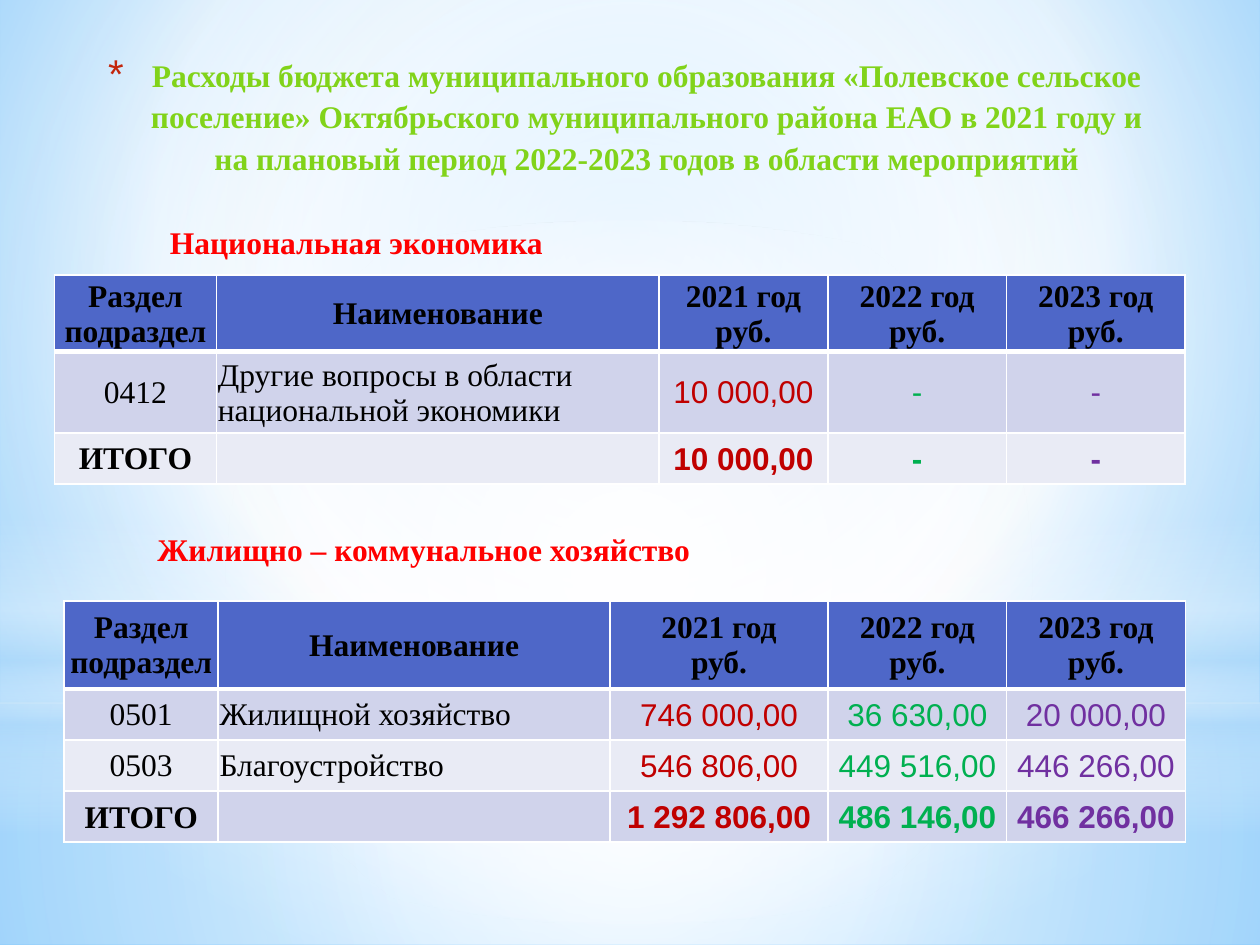
"""Build a budget slide with two expense tables on a soft blue backdrop."""
from lxml import etree
from pptx import Presentation
from pptx.dml.color import RGBColor
from pptx.enum.shapes import MSO_SHAPE
from pptx.enum.text import MSO_ANCHOR, MSO_AUTO_SIZE, PP_ALIGN
from pptx.oxml import parse_xml
from pptx.oxml.ns import nsdecls, qn
from pptx.util import Pt

RECT, OVAL = MSO_SHAPE.RECTANGLE, MSO_SHAPE.OVAL
TOP, MIDDLE = MSO_ANCHOR.TOP, MSO_ANCHOR.MIDDLE
LEFT, CENTER = PP_ALIGN.LEFT, PP_ALIGN.CENTER
NOFIT, GROW = MSO_AUTO_SIZE.NONE, MSO_AUTO_SIZE.SHAPE_TO_FIT_TEXT
SERIF, SANS = "Times New Roman", "Arial"
BLACK = RGBColor(0x00, 0x00, 0x00)
WHITE = RGBColor(0xFF, 0xFF, 0xFF)
SKY = RGBColor(0xB4, 0xDC, 0xFA)
PALE = RGBColor(0x9E, 0xD5, 0xFF)
AZURE = RGBColor(0x5B, 0xB9, 0xFF)
LIME = RGBColor(0x81, 0xD3, 0x1A)
RED = RGBColor(0xFF, 0x00, 0x00)
RUST = RGBColor(0xC3, 0x26, 0x0C)
CRIMSON = RGBColor(0xC0, 0x00, 0x00)
GREEN = RGBColor(0x00, 0xB0, 0x50)
PURPLE = RGBColor(0x70, 0x30, 0xA0)
HEAD = RGBColor(0x4E, 0x67, 0xC8)
BANDS = [RGBColor(0xE9, 0xEB, 0xF5), RGBColor(0xD0, 0xD3, 0xEB)]
INKS = [BLACK, BLACK, CRIMSON, GREEN, PURPLE]


def write(frame, text, font=SERIF, color=BLACK, bold=True, align=LEFT, space=1.0):
    """Fill a text frame with formatted paragraphs."""
    frame.text = text
    for para in frame.paragraphs:
        para.alignment = align
        para.line_spacing = space
        for run in para.runs:
            run.font.size = Pt(18)
            run.font.name = font
            run.font.bold = bold
            run.font.color.rgb = color


def shade(root, stops, focus=None):
    """Swap a solid fill for a gradient: round about focus, or downward."""
    marks = "".join(
        f'<a:gs pos="{pos * 1000}"><a:srgbClr val="{color}">'
        f'<a:alpha val="{alpha * 1000}"/></a:srgbClr></a:gs>'
        for pos, color, alpha in stops)
    way = '<a:lin ang="5400000" scaled="0"/>'
    if focus:
        sides = " ".join(f'{side}="{part * 1000}"' for side, part in zip("ltrb", focus))
        way = f'<a:path path="circle"><a:fillToRect {sides}/></a:path>'
    solid = root.find(qn("a:solidFill"))
    root.replace(solid, parse_xml(
        f'<a:gradFill {nsdecls("a")} rotWithShape="1"><a:gsLst>{marks}</a:gsLst>{way}</a:gradFill>'))


deck = Presentation()
deck.slide_width, deck.slide_height = Pt(720), Pt(540)
slide = deck.slides.add_slide(deck.slide_layouts[5])

slide.background.fill.solid()
shade(slide.element.find(".//" + qn("p:bgPr")),
      [(0, PALE, 100), (60, WHITE, 100), (100, AZURE, 100)], (20, 10, 20, 60))

MID = (50, 50, 50, 50)
glows = [
    (RECT, 401.76, 138.24, [(0, WHITE, 91), (37, WHITE, 76), (100, SKY, 79)], MID),
    (RECT, 0, 401.76, [(0, WHITE, 89), (48, WHITE, 62), (100, SKY, 79)], MID),
    (RECT, 296.64, 180, [(0, WHITE, 0), (29, WHITE, 30), (45, SKY, 40),
                         (55, WHITE, 26), (65, SKY, 60), (100, WHITE, 0)], None),
    (OVAL, 126, 401.76, [(0, WHITE, 100), (56, WHITE, 0)], MID),
]
for kind, top, high, stops, focus in glows:
    glow = slide.shapes.add_shape(kind, 0, Pt(top), Pt(720), Pt(high))
    glow.shadow.inherit = False
    glow.line.fill.background()
    glow.fill.solid()
    shade(glow.element.spPr, stops, focus)

title = slide.shapes.title
title.left, title.top, title.width, title.height = Pt(42.5), Pt(26), Pt(629.3), Pt(90)
slide.shapes.element.append(title.element)
frame = title.text_frame
frame.word_wrap, frame.auto_size = True, NOFIT
frame.vertical_anchor = TOP
write(frame, "Расходы бюджета муниципального образования «Полевское сельское поселение» "
      "Октябрьского муниципального района ЕАО в 2021 году и на плановый период "
      "2022-2023 годов в области мероприятий", color=LIME, align=CENTER, space=1.1)
props = frame.paragraphs[0]._p.get_or_add_pPr()
props.set("marL", str(Pt(25)))
props.set("indent", str(Pt(-25)))
tint = etree.SubElement(props, qn("a:buClr"))
etree.SubElement(tint, qn("a:srgbClr"), val=str(RUST))
etree.SubElement(props, qn("a:buSzPct"), val="128000")
etree.SubElement(props, qn("a:buFont"), typeface=SANS)
etree.SubElement(props, qn("a:buChar"), char="*")

for left, top, text in [(90, 121.7, "Национальная экономика"),
                        (82.8, 297.4, "Жилищно – коммунальное хозяйство")]:
    box = slide.shapes.add_textbox(Pt(left), Pt(top), Pt(324.7), Pt(29.2))
    box.text_frame.word_wrap = True
    box.text_frame.auto_size = GROW
    write(box.text_frame, text, color=RED, space=1.1)

tables = [
    (31, 157, 119.5, [92.8, 252.9, 96.4, 102.1, 102.1], [34.6, 46.5, 29.2], [
        ["Раздел подраздел", "Наименование", "2021 год руб.", "2022 год руб.", "2023 год руб."],
        ["0412", "Другие вопросы в области национальной экономики", "10 000,00", "-", "-"],
        ["ИТОГО", "", "10 000,00", "-", "-"]]),
    (36.7, 343.4, 139, [88, 223.9, 124.6, 102.1, 102.1], [50.3, 29.2, 29.2, 29.2], [
        ["Раздел подраздел", "Наименование", "2021 год\nруб.", "2022 год руб.", "2023 год руб."],
        ["0501", "Жилищной хозяйство", "746 000,00", "36 630,00", "20 000,00"],
        ["0503", "Благоустройство", "546 806,00", "449 516,00", "446 266,00"],
        ["ИТОГО", "", "1 292 806,00", "486 146,00", "466 266,00"]]),
]
for left, top, high, widths, heights, rows in tables:
    holder = slide.shapes.add_table(len(rows), len(widths), Pt(left), Pt(top),
                                    Pt(sum(widths)), Pt(high))
    grid = holder.table
    for col, width in zip(grid.columns, widths):
        col.width = Pt(width)
    for row, height in zip(grid.rows, heights):
        row.height = Pt(height)
    holder.height = Pt(high)
    for r, row in enumerate(rows):
        for c, text in enumerate(row):
            cell = grid.cell(r, c)
            cell.margin_left = cell.margin_right = cell.margin_top = Pt(0.75)
            cell.margin_bottom = 0
            cell.vertical_anchor = MIDDLE
            props = cell._tc.get_or_add_tcPr()
            for side in "LRTB":
                thick = (r, side) in [(0, "B"), (1, "T")]
                edge = etree.SubElement(props, qn("a:ln" + side), w=str(Pt(3 if thick else 1)))
                paint = etree.SubElement(edge, qn("a:solidFill"))
                etree.SubElement(paint, qn("a:srgbClr"), val=str(WHITE))
            cell.fill.solid()
            cell.fill.fore_color.rgb = BANDS[r % 2] if r else HEAD
            write(cell.text_frame, text,
                  font=SANS if r and c > 1 else SERIF,
                  color=INKS[c] if r else BLACK,
                  bold=r in (0, len(rows) - 1),
                  align=LEFT if r and c == 1 else CENTER)

deck.save("out.pptx")
